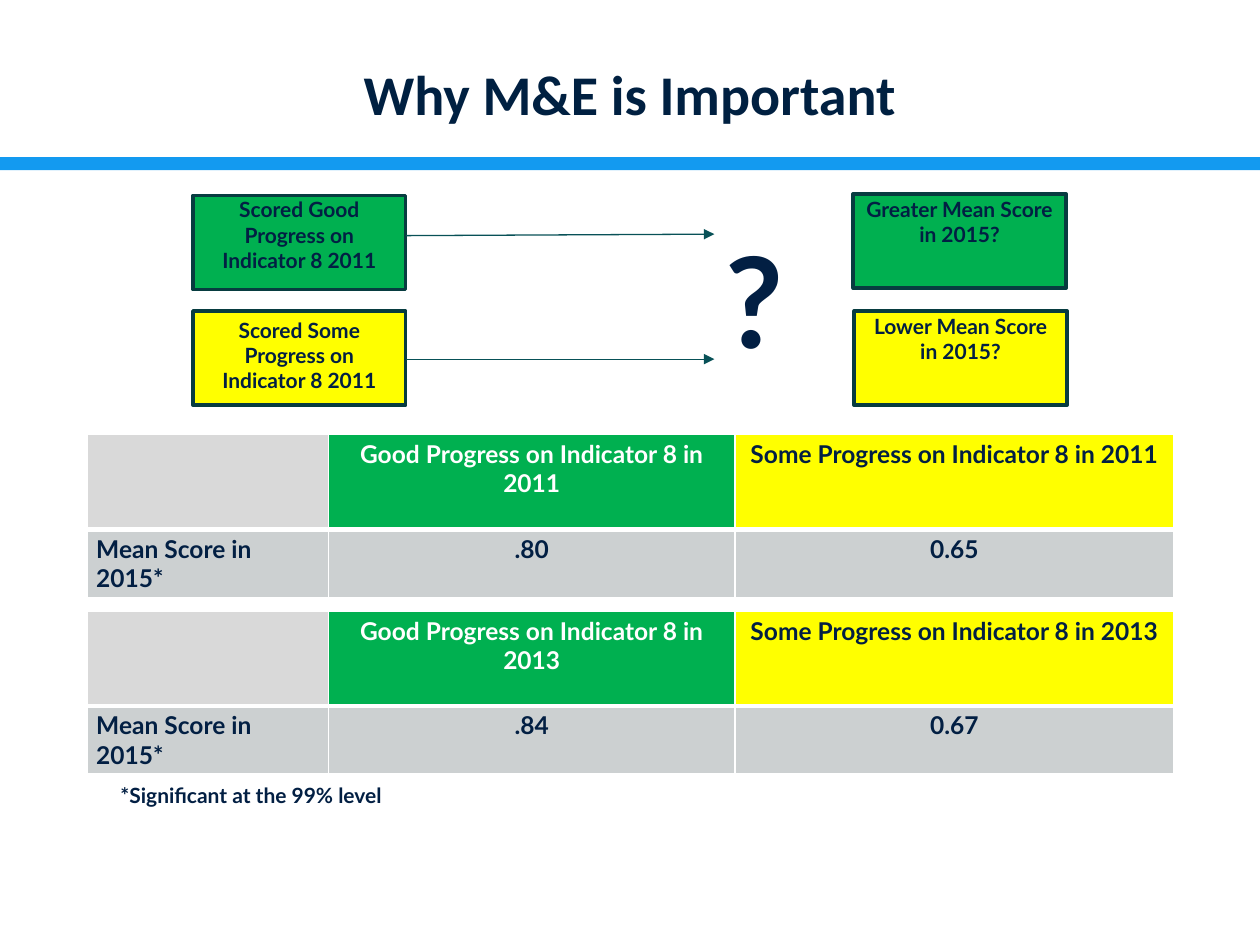
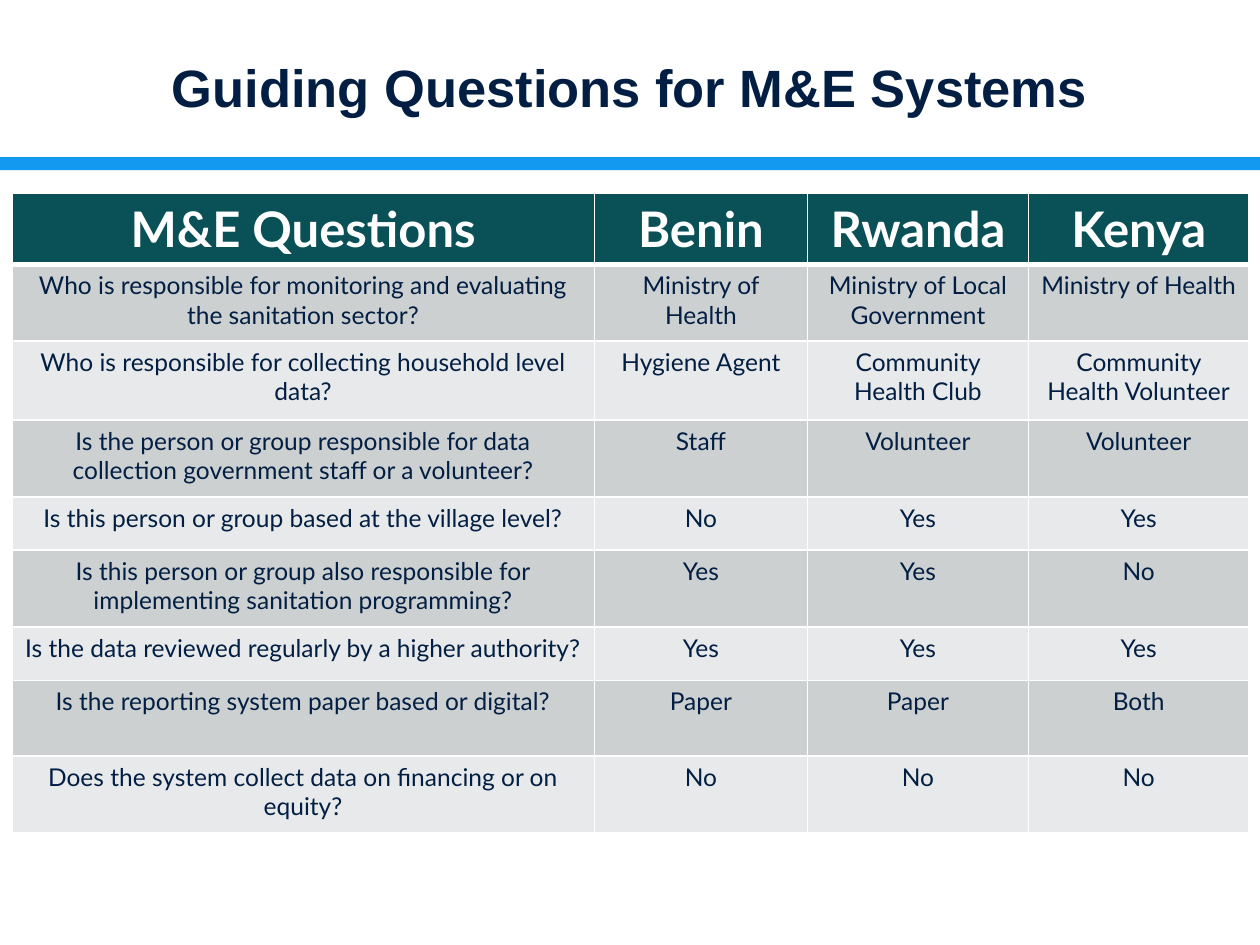
from lxml import etree
from pptx import Presentation
from pptx import util as u
from pptx.dml.color import RGBColor
from pptx.enum import shapes, text
from pptx.oxml.ns import qn

COLOURS = {
    "band": "139AF0", "title": "002041", "ink": "021F43", "white": "FFFFFF",
    "good": "00B050", "some": "FFFF00", "outline": "073C40", "arrow": "085157",
    "header": "0A5157", "empty": "D9D9D9", "dark_row": "CCD0D1", "light_row": "E7E9EA",
}
FONT = "Lato"
CENTRE, LEFT = text.PP_ALIGN.CENTER, text.PP_ALIGN.LEFT
TOP, MIDDLE = text.MSO_ANCHOR.TOP, text.MSO_ANCHOR.MIDDLE

QUESTIONS = [
    ("M&E Questions", "Benin", "Rwanda", "Kenya"),
    ("Who is responsible for monitoring and evaluating the sanitation sector?",
     "Ministry of Health", "Ministry of Local Government", "Ministry of Health"),
    ("Who is responsible for collecting household level data?",
     "Hygiene Agent", "Community Health Club", "Community Health Volunteer"),
    ("Is the person or group responsible for data collection government staff or a volunteer?",
     "Staff", "Volunteer", "Volunteer"),
    ("Is this person or group based at the village level?", "No", "Yes", "Yes"),
    ("Is this person or group also responsible for implementing sanitation programming?",
     "Yes", "Yes", "No"),
    ("Is the data reviewed regularly by a higher authority?", "Yes", "Yes", "Yes"),
    ("Is the reporting system paper based or digital?", "Paper", "Paper", "Both"),
    ("Does the system collect data on financing or on equity?", "No", "No", "No"),
]


def colour(name):
    """Return the named colour."""
    return RGBColor.from_string(COLOURS[name])


def write(frame, words, size, ink="ink", bold=True, align=CENTRE, font=FONT):
    """Write one paragraph into a text frame."""
    para = frame.paragraphs[0]
    para.text = words
    para.alignment = align
    para.font.name = font
    para.font.size = u.Pt(size)
    para.font.bold = bold
    para.font.color.rgb = colour(ink)


def add_text(page, words, left, top, width, height, size, anchor=TOP, **style):
    """Add a wrapping text box."""
    box = page.shapes.add_textbox(u.Cm(left), u.Cm(top), u.Cm(width), u.Cm(height))
    box.text_frame.word_wrap = True
    box.text_frame.vertical_anchor = anchor
    write(box.text_frame, words, size, **style)


def add_rectangle(page, left, top, width, height, fill):
    """Add a plain rectangle without a line."""
    box = page.shapes.add_shape(shapes.MSO_SHAPE.RECTANGLE,
                                u.Cm(left), u.Cm(top), u.Cm(width), u.Cm(height))
    box.shadow.inherit = False
    box.fill.solid()
    box.fill.fore_color.rgb = colour(fill)
    box.line.fill.background()
    return box


def add_score_box(page, words, left, top, fill, inset):
    """Add an outlined box with its label at the top."""
    box = add_rectangle(page, left, top, 4.29, 1.9, fill)
    box.line.color.rgb = colour("outline")
    box.line.width = u.Pt(2)
    frame = box.text_frame
    frame.word_wrap = True
    frame.vertical_anchor = TOP
    frame.margin_top = u.Cm(inset)
    frame.margin_left = frame.margin_right = u.Cm(0.24)
    write(frame, words, 12)


def add_arrow(page, left, top, right, bottom):
    """Add a thin line that ends in a triangle."""
    arrow = page.shapes.add_connector(shapes.MSO_CONNECTOR.STRAIGHT,
                                      u.Cm(left), u.Cm(top), u.Cm(right), u.Cm(bottom))
    arrow.line.color.rgb = colour("arrow")
    arrow.line.width = u.Pt(0.75)
    etree.SubElement(arrow.line._get_or_add_ln(), qn("a:tailEnd"), type="triangle")
    etree.SubElement(arrow._element.spPr, qn("a:effectLst"))


def set_borders(cell, row):
    """Give a cell white borders, thick between the header and the body."""
    widths = {"L": 1, "R": 1, "T": 3 if row == 1 else 1, "B": 3 if row == 0 else 1}
    for side, width in widths.items():
        line = etree.SubElement(cell._tc.get_or_add_tcPr(), qn(f"a:ln{side}"),
                                w=str(u.Pt(width)))
        fill = etree.SubElement(line, qn("a:solidFill"))
        etree.SubElement(fill, qn("a:srgbClr"), val=COLOURS["white"])


def add_grid(page, left, top, widths, heights, rows, inset, style):
    """Add a table; style(row, column) gives the fill and the text settings."""
    grid = page.shapes.add_table(len(heights), len(widths), u.Cm(left), u.Cm(top),
                                 u.Cm(sum(widths)), u.Cm(sum(heights))).table
    grid.first_row = grid.horz_banding = False
    for column, width in zip(grid.columns, widths):
        column.width = u.Cm(width)
    for grid_row, height in zip(grid.rows, heights):
        grid_row.height = u.Cm(height)
    for r, row in enumerate(rows):
        for c, words in enumerate(row):
            cell = grid.cell(r, c)
            fill, settings = style(r, c)
            set_borders(cell, r)
            cell.fill.solid()
            cell.fill.fore_color.rgb = colour(fill)
            cell.margin_left = cell.margin_right = u.Cm(inset)
            cell.margin_top = cell.margin_bottom = u.Cm(inset / 2)
            if words:
                write(cell.text_frame, words, **settings)


def score_style(row, column):
    """Style a cell of a mean score table."""
    fill = ("empty", "good", "some")[column] if row == 0 else "dark_row"
    return fill, {"size": 14, "ink": "white" if fill == "good" else "ink",
                  "align": CENTRE if column else LEFT}


def question_style(row, column):
    """Style a cell of the guiding questions table."""
    if row == 0:
        return "header", {"size": 28, "ink": "white"}
    return "dark_row" if row % 2 else "light_row", {"size": 14, "bold": False}


def add_page(deck, title, top, **style):
    """Add a page with the blue band and a centred title."""
    page = deck.slides.add_slide(deck.slide_layouts[6])
    add_rectangle(page, 0, 3.17, 25.4, 0.26, "band")
    add_text(page, title, 2.22, top, 20.96, 3.18, anchor=MIDDLE, **style)
    return page


def add_importance_page(deck):
    """Show how progress on indicator 8 relates to later scores."""
    page = add_page(deck, "Why M&E is Important", 0.28, size=32, font="Calibri", ink="title")
    for year, top, good, some in (("2011", 8.76, ".80", "0.65"), ("2013", 12.32, ".84", "0.67")):
        rows = [("", f"Good Progress on Indicator 8 in {year}",
                 f"Some Progress on Indicator 8 in {year}"),
                ("Mean Score in 2015*", good, some)]
        add_grid(page, 1.75, top, (4.87, 8.2, 8.84), (1.91, 1.35), rows, 0.19, score_style)
    add_text(page, "*Significant at the 99% level", 2.18, 15.65, 8.51, 0.76, 12, align=LEFT)
    add_score_box(page, "Scored Good Progress on Indicator 8 2011", 3.89, 3.94, "good", 0.03)
    add_score_box(page, "Scored Some Progress on Indicator 8 2011", 3.89, 6.27, "some", 0.13)
    add_score_box(page, "Greater Mean Score in 2015?", 17.2, 3.91, "good", 0.05)
    add_score_box(page, "Lower Mean Score in 2015?", 17.22, 6.27, "some", 0.05)
    add_arrow(page, 8.18, 4.75, 14.4, 4.72)
    add_arrow(page, 8.18, 7.24, 14.4, 7.24)
    add_text(page, "?", 14.38, 4.37, 2.82, 3.33, 72, align=LEFT)


def add_questions_page(deck):
    """Compare the monitoring systems of three countries."""
    page = add_page(deck, "Guiding Questions for M&E Systems", 0.15, size=30, font="Arial")
    heights = (1.38, 1.55, 1.59, 1.55, 1.07, 1.55, 1.08, 1.52, 1.55)
    add_grid(page, 0.24, 3.89, (11.74, 4.3, 4.45, 4.45), heights, QUESTIONS, 0.25,
             question_style)


def main():
    """Build and save the deck."""
    deck = Presentation()
    deck.slide_width, deck.slide_height = u.Cm(25.4), u.Cm(19.05)
    add_importance_page(deck)
    add_questions_page(deck)
    deck.save("out.pptx")


if __name__ == "__main__":
    main()
